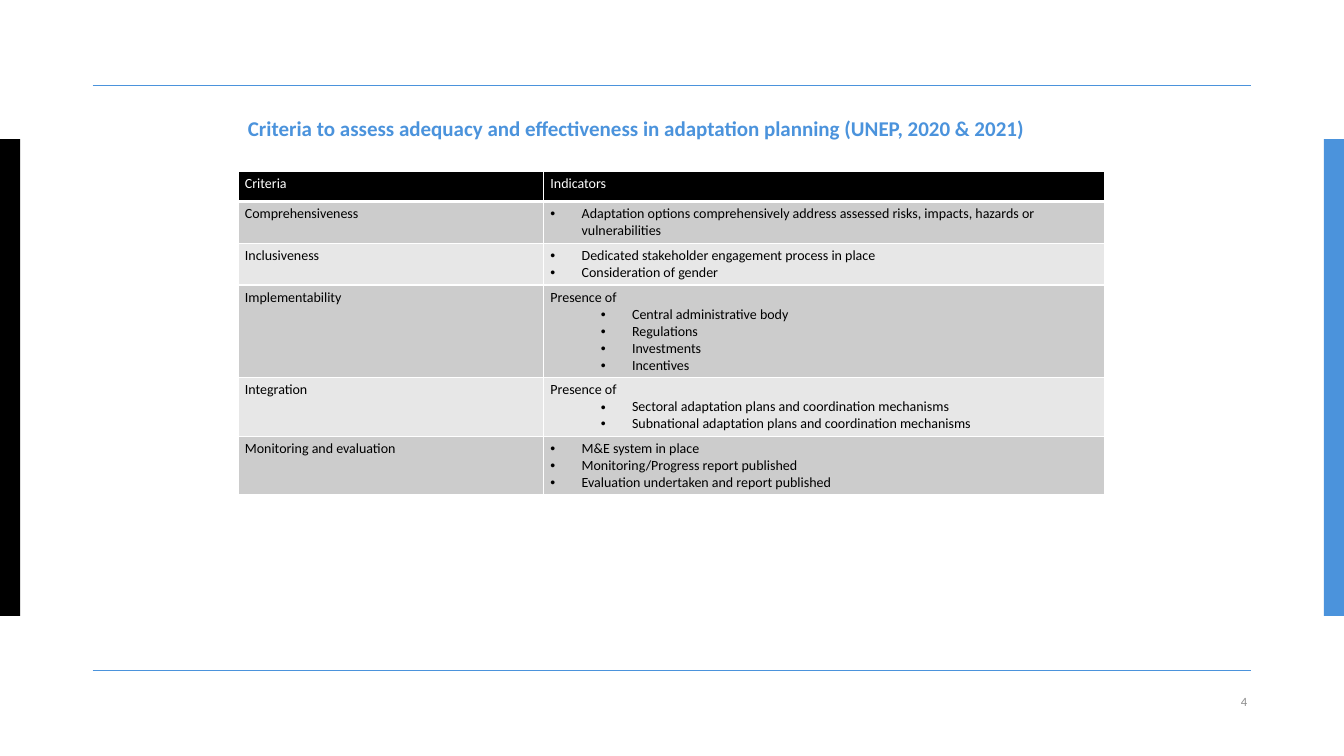
"""Build the slide on criteria for adequate and effective adaptation planning."""
import lxml.etree
import pptx
import pptx.dml.color
import pptx.enum.shapes
import pptx.enum.text
import pptx.oxml.ns
import pptx.util

RGBColor = pptx.dml.color.RGBColor
BLACK = RGBColor(0x00, 0x00, 0x00)
WHITE = RGBColor(0xFF, 0xFF, 0xFF)
BLUE = RGBColor(0x4B, 0x93, 0xDC)
GREY = RGBColor(0x8C, 0x8C, 0x8C)
DARK_BAND = RGBColor(0xCC, 0xCC, 0xCC)
LIGHT_BAND = RGBColor(0xE7, 0xE7, 0xE7)
PX = 9144
qn = pptx.oxml.ns.qn
SubElement = lxml.etree.SubElement


def write(para, text, size=10, color=BLACK, bold=False, align=None, spacing=None, indent=None):
    """Put formatted text in a paragraph, bulleted when it has an indent."""
    if indent is not None:
        properties = para._p.get_or_add_pPr()
        properties.set("marL", str(indent * PX))
        properties.set("indent", str(-31 * PX))
        SubElement(properties, qn("a:buFont")).set("typeface", "Arial")
        SubElement(properties, qn("a:buChar")).set("char", "•")
    if align is not None:
        para.alignment = align
    if spacing is not None:
        para.line_spacing = pptx.util.Pt(spacing)
    span = para.add_run()
    span.text = text
    span.font.name = "Calibri"
    span.font.size = pptx.util.Pt(size)
    span.font.bold = bold
    span.font.color.rgb = color


deck = pptx.Presentation()
deck.slide_width = 1333 * PX
deck.slide_height = 750 * PX
page = deck.slides.add_slide(deck.slide_layouts[6])
shapes = page.shapes

for left, color in ((0, BLACK), (1313, BLUE)):
    bar = shapes.add_shape(pptx.enum.shapes.MSO_SHAPE.RECTANGLE,
                           left * PX, 138 * PX, 20 * PX, 473 * PX)
    bar.shadow.inherit = False
    bar.fill.solid()
    bar.fill.fore_color.rgb = color
    bar.line.fill.background()

for top in (85, 665):
    rule = shapes.add_connector(pptx.enum.shapes.MSO_CONNECTOR.STRAIGHT,
                                92 * PX, top * PX, 1241 * PX, top * PX)
    rule.line.color.rgb = BLUE
    rule.line.width = pptx.util.Pt(1)
    SubElement(rule._element.spPr, qn("a:effectLst"))

number = shapes.add_textbox(1183 * PX, 682 * PX, 61 * PX, 28 * PX).text_frame
number.margin_left = number.margin_right = 7 * PX
number.margin_top = number.margin_bottom = 4 * PX
title = shapes.add_textbox(236 * PX, 116 * PX, 861 * PX, 32 * PX).text_frame
for frame in (number, title):
    frame.word_wrap = True
    frame.vertical_anchor = pptx.enum.text.MSO_ANCHOR.MIDDLE
write(number.paragraphs[0], "4", size=9, color=GREY, align=pptx.enum.text.PP_ALIGN.RIGHT)
write(title.paragraphs[0],
      "Criteria to assess adequacy and effectiveness in adaptation planning (UNEP, 2020 & 2021)",
      size=15, color=BLUE, bold=True, spacing=11.2)

criteria = [
    (30, "Criteria", "Indicators", None, []),
    (41, "Comprehensiveness", None, 31, [
        "Adaptation options comprehensively address assessed risks, impacts, hazards or vulnerabilities"]),
    (41, "Inclusiveness", None, 31, [
        "Dedicated stakeholder engagement process in place",
        "Consideration of gender"]),
    (92, "Implementability", "Presence of", 81, [
        "Central administrative body", "Regulations", "Investments", "Incentives"]),
    (58, "Integration", "Presence of", 81, [
        "Sectoral adaptation plans and coordination mechanisms",
        "Subnational adaptation plans and coordination mechanisms"]),
    (58, "Monitoring and evaluation", None, 31, [
        "M&E system in place",
        "Monitoring/Progress report published",
        "Evaluation undertaken and report published"]),
]
table = shapes.add_table(len(criteria), 2, 236 * PX, 170 * PX, 860 * PX, 320 * PX).table
for column, width in zip(table.columns, (303, 557)):
    column.width = width * PX

for row, (height, criterion, lead, indent, indicators) in enumerate(criteria):
    table.rows[row].height = height * PX
    header = row == 0
    band = BLACK if header else DARK_BAND if row % 2 else LIGHT_BAND
    lines = [(lead, None)] if lead else []
    lines += [(indicator, indent) for indicator in indicators]
    for column, content in enumerate(([(criterion, None)], lines)):
        cell = table.cell(row, column)
        cell.margin_left = cell.margin_right = 7 * PX
        cell.margin_top = cell.margin_bottom = 4 * PX
        for side in ("lnL", "lnR", "lnT", "lnB"):
            points = 3 if header and side == "lnB" else 1
            edge = SubElement(cell._tc.get_or_add_tcPr(), qn("a:" + side))
            edge.set("w", str(pptx.util.Pt(points)))
            paint = SubElement(edge, qn("a:solidFill"))
            SubElement(paint, qn("a:srgbClr")).set("val", str(WHITE))
        cell.fill.solid()
        cell.fill.fore_color.rgb = band
        for index, (text, inset) in enumerate(content):
            frame = cell.text_frame
            para = frame.add_paragraph() if index else frame.paragraphs[0]
            if inset == 81:
                para.level = 1
            write(para, text, color=WHITE if header else BLACK, indent=inset)

deck.save("out.pptx")
